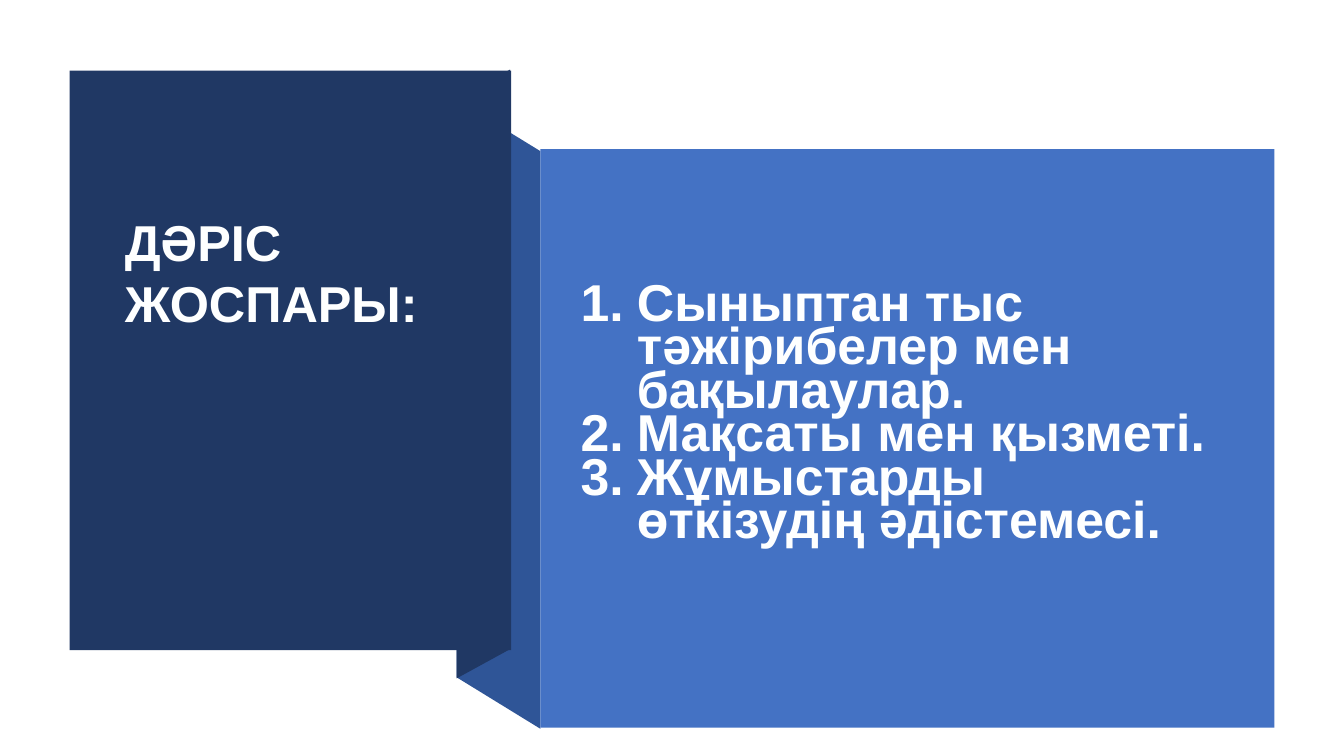
from lxml import etree
from pptx import Presentation
from pptx.dml.color import RGBColor
from pptx.enum.shapes import MSO_SHAPE as Shape
from pptx.enum.text import MSO_ANCHOR as Anchor
from pptx.oxml.ns import qn
from pptx.util import Inches, Pt

NAVY = RGBColor(0x20, 0x38, 0x64)
FOLD = RGBColor(0x2F, 0x55, 0x97)
BLUE = RGBColor(0x44, 0x72, 0xC4)
WHITE = RGBColor(0xFE, 0xFF, 0xFF)

TITLE = "ДӘРІС ЖОСПАРЫ:"
TOPICS = [
    "Сыныптан тыс тәжірибелер мен бақылаулар.",
    "Мақсаты мен қызметі.",
    "Жұмыстарды өткізудің әдістемесі.",
]


class Page:
    """Draws flat shapes and bold text on one slide."""

    font = "Arial"
    indent = Inches(0.56)

    def __init__(self, slide):
        self.shapes = slide.shapes

    def paint(self, shape, color):
        shape.shadow.inherit = False
        shape.fill.solid()
        shape.fill.fore_color.rgb = color
        shape.line.fill.background()

    def panel(self, box, color):
        rect = self.shapes.add_shape(Shape.RECTANGLE, *map(Inches, box))
        self.paint(rect, color)

    def fold(self, points, color):
        start, *rest = [(Inches(x), Inches(y)) for x, y in points]
        pen = self.shapes.build_freeform(*start)
        pen.add_line_segments(rest, close=True)
        self.paint(pen.convert_to_shape(), color)

    def number(self, para):
        """Give a paragraph a hanging automatic number."""
        props = para._p.get_or_add_pPr()
        props.set("marL", str(self.indent))
        props.set("indent", str(-self.indent))
        etree.SubElement(props, qn("a:buAutoNum"), type="arabicPeriod")

    def text(self, box, lines, size, spacing=1.0, numbered=False):
        frame = self.shapes.add_textbox(*map(Inches, box)).text_frame
        frame.word_wrap = True
        frame.vertical_anchor = Anchor.MIDDLE
        frame.text = "\n".join(lines)
        for para in frame.paragraphs:
            para.line_spacing = spacing
            if numbered:
                self.number(para)
            font = para.font
            font.name, font.size, font.bold = self.font, Pt(size), True
            font.color.rgb = WHITE


def main():
    deck = Presentation()
    deck.slide_width, deck.slide_height = Inches(13.33), Inches(7.5)
    page = Page(deck.slides.add_slide(deck.slide_layouts[6]))

    page.fold([(5.36, 7.23), (4.53, 6.72), (4.53, 0.99), (5.36, 1.5)], FOLD)
    page.fold([(5.06, 6.44), (4.53, 6.73), (4.53, 0.98), (5.06, 0.69)], NAVY)
    page.panel((0.69, 0.7, 4.38, 5.75), NAVY)
    page.panel((5.36, 1.48, 7.28, 5.74), BLUE)
    page.text((5.66, 2.7, 6.5, 2.87), TOPICS, 37, 0.7, numbered=True)
    page.text((1.14, 2.04, 4.04, 1.31), [TITLE], 36)

    deck.save("out.pptx")


if __name__ == "__main__":
    main()
